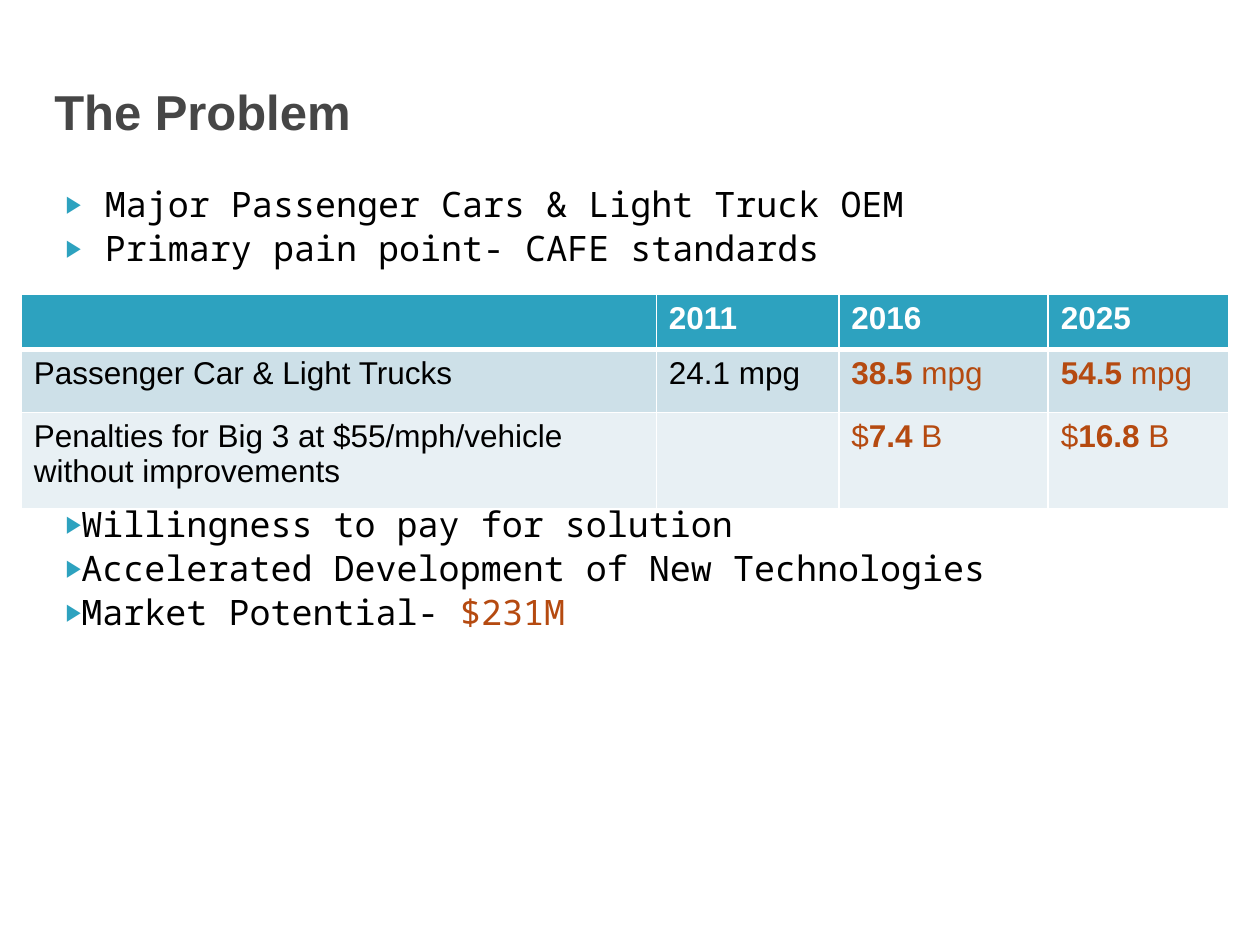
from dataclasses import dataclass

from lxml import etree
from pptx import Presentation
from pptx.dml.color import RGBColor
from pptx.enum.text import MSO_ANCHOR, MSO_AUTO_SIZE, PP_ALIGN
from pptx.oxml.ns import qn
from pptx.util import Cm, Pt

LEFT = PP_ALIGN.LEFT
TOP, MIDDLE = MSO_ANCHOR.TOP, MSO_ANCHOR.MIDDLE
NO_AUTOFIT = MSO_AUTO_SIZE.NONE


@dataclass(frozen=True)
class Theme:
    heading_font: str = "Arial"
    body_font: str = "Noto Sans Mono"
    title_size: int = 28
    body_size: int = 20
    table_size: int = 18
    title: str = "464646"
    ink: str = "000000"
    white: str = "FFFFFF"
    teal: str = "2DA2BF"
    accent: str = "B54A10"
    bands: tuple = ("CDE0E8", "E8F0F4")


def apply(target, formats):
    for name, value in formats.items():
        setattr(target, name, value)


class SlideBuilder:
    def __init__(self, deck, theme):
        self.theme = theme
        self.page = deck.slides.add_slide(deck.slide_layouts[1])

    def add_spans(self, para, spans, font, size):
        """Add (text, colour, bold) spans to a paragraph."""
        for text, colour, bold in spans:
            span = para.add_run()
            span.text = text
            apply(span.font, {"name": font, "size": Pt(size), "bold": bold})
            span.font.color.rgb = RGBColor.from_string(colour)

    def place(self, box, left, top, width, height, anchor):
        apply(box, {"left": Cm(left), "top": Cm(top),
                    "width": Cm(width), "height": Cm(height)})
        apply(box.text_frame, {"word_wrap": True, "auto_size": NO_AUTOFIT,
                               "vertical_anchor": anchor})
        return box.text_frame

    def title(self, text, *area):
        frame = self.place(self.page.shapes.title, *area, MIDDLE)
        para = frame.paragraphs[0]
        para.alignment = LEFT
        self.add_spans(para, [(text, self.theme.title, True)],
                       self.theme.heading_font, self.theme.title_size)

    def bullet(self, para, indent):
        props = para._p.get_or_add_pPr()
        props.set("marL", str(Cm(indent)))
        props.set("indent", str(-Cm(indent)))
        colour = etree.SubElement(props, qn("a:buClr"))
        etree.SubElement(colour, qn("a:srgbClr"), val=self.theme.teal)
        etree.SubElement(props, qn("a:buSzPct"), val="68000")
        etree.SubElement(props, qn("a:buFont"), typeface="Arial")
        etree.SubElement(props, qn("a:buChar"), char="▶")

    def bullets(self, items, *area):
        """Fill the body with (spans, indent, space before) items."""
        frame = self.place(self.page.placeholders[1], *area, TOP)
        for index, (spans, indent, space) in enumerate(items):
            para = frame.add_paragraph() if index else frame.paragraphs[0]
            self.bullet(para, indent)
            apply(para, {"alignment": LEFT, "line_spacing": 0.95,
                         "space_before": Pt(space)})
            self.add_spans(para, spans, self.theme.body_font,
                           self.theme.body_size)

    def borders(self, cell, bottom):
        props = cell._tc.get_or_add_tcPr()
        sides = {"lnL": 1, "lnR": 1, "lnT": 1, "lnB": bottom}
        for index, (side, width) in enumerate(sides.items()):
            line = etree.Element(qn(f"a:{side}"), w=str(Pt(width)))
            fill = etree.SubElement(line, qn("a:solidFill"))
            etree.SubElement(fill, qn("a:srgbClr"), val=self.theme.white)
            props.insert(index, line)

    def table(self, rows, widths, heights, left, top):
        grid = self.page.shapes.add_table(
            len(rows), len(widths), Cm(left), Cm(top),
            Cm(sum(widths)), Cm(sum(heights))).table
        for column, width in zip(grid.columns, widths):
            column.width = Cm(width)
        for row, height in zip(grid.rows, heights):
            row.height = Cm(height)
        fills = (self.theme.teal, *self.theme.bands)
        for row_index, (row, fill) in enumerate(zip(rows, fills)):
            for column_index, spans in enumerate(row):
                cell = grid.cell(row_index, column_index)
                cell.fill.solid()
                cell.fill.fore_color.rgb = RGBColor.from_string(fill)
                self.borders(cell, bottom=1 if row_index else 3)
                para = cell.text_frame.paragraphs[0]
                para.font.size = Pt(self.theme.table_size)
                self.add_spans(para, spans, self.theme.heading_font,
                               self.theme.table_size)


def main():
    theme = Theme()
    deck = Presentation()
    apply(deck, {"slide_width": Cm(25.4), "slide_height": Cm(19.05)})
    slide = SlideBuilder(deck, theme)

    def plain(text):
        return [(text, theme.ink, False)]

    def header(text):
        return [(text, theme.white, True)]

    def figure(before, number, unit):
        parts = ((before, False), (number, True), (unit, False))
        return [(text, theme.accent, bold) for text, bold in parts if text]

    # Bullets above and below the table, parted by paragraph spacing
    gap, table_gap, hanging = 2.2, 135.3, 0.79
    slide.bullets([
        (plain("Major Passenger Cars & Light Truck OEM"), hanging, 0),
        (plain("Primary pain point- CAFE standards"), hanging, gap),
        (plain("Willingness to pay for solution"), 0, table_gap),
        (plain("Accelerated Development of New Technologies"), 0, gap),
        (plain("Market Potential- ") + [("$231M", theme.accent, False)], 0, gap),
    ], 1.07, 3.61, 23.5, 14.4)

    # Heading
    slide.title("The Problem", 0.84, 0.64, 22.86, 3.18)

    # Fuel economy targets and penalties
    slide.table([
        [[], header("2011"), header("2016"), header("2025")],
        [plain("Passenger Car & Light Trucks"), plain("24.1 mpg"),
         figure("", "38.5 ", "mpg"), figure("", "54.5 ", "mpg")],
        [plain("Penalties for Big 3 at $55/mph/vehicle without improvements"),
         [], figure("$", "7.4 ", "B"), figure("$", "16.8 ", "B")],
    ], (12.8, 3.68, 4.22, 3.63), (1.12, 1.27, 1.93), 0.43, 5.93)

    deck.save("out.pptx")


if __name__ == "__main__":
    main()
